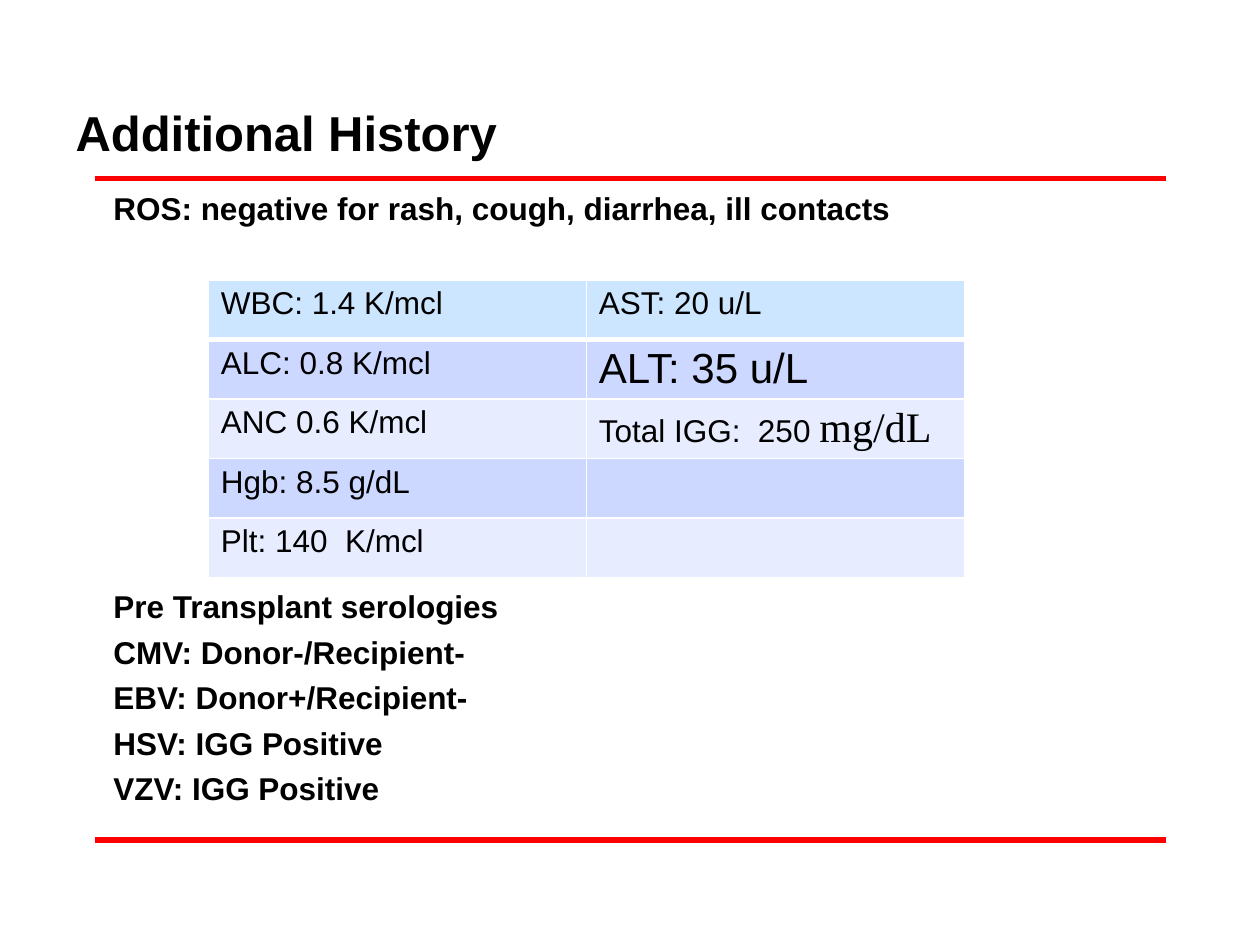
"""Build the Additional History slide with laboratory values and serologies."""
import lxml.etree
import pptx
import pptx.dml.color
import pptx.enum.shapes
import pptx.enum.text
import pptx.oxml.ns
import pptx.util

Pt = pptx.util.Pt
RGBColor = pptx.dml.color.RGBColor
qn = pptx.oxml.ns.qn

BLACK = RGBColor(0x00, 0x00, 0x00)
RED = RGBColor(0xFF, 0x00, 0x00)
WHITE = RGBColor(0xFF, 0xFF, 0xFF)
HEADER_BLUE = RGBColor(0xCC, 0xE6, 0xFF)
DARK_BAND = RGBColor(0xCC, 0xD8, 0xFF)
LIGHT_BAND = RGBColor(0xE7, 0xED, 0xFF)

SANS = "Arial"
SERIF = "Times New Roman"
ROW_HEIGHT = 34
TABLE_GAP = 206

HISTORY = [
    ("ROS: negative for rash, cough, diarrhea, ill contacts", 0),
    ("Pre Transplant serologies", TABLE_GAP),
    ("CMV: Donor-/Recipient-", 4.4),
    ("EBV: Donor+/Recipient-", 4.4),
    ("HSV: IGG Positive", 4.4),
    ("VZV: IGG Positive", 4.4),
]
LABS = [
    [[("WBC: 1.4 K/mcl", 18, SANS)], [("AST: 20 u/L", 18, SANS)]],
    [[("ALC: 0.8 K/mcl", 18, SANS)], [("ALT: 35 u/L", 24, SANS)]],
    [[("ANC 0.6 K/mcl", 18, SANS)],
     [("Total IGG:  250 ", 18, SANS), ("mg/dL", 24, SERIF)]],
    [[("Hgb: 8.5 g/dL", 18, SANS)], []],
    [[("Plt: 140  K/mcl", 18, SANS)], []],
]


def style_font(font, size, name=SANS, bold=False):
    """Apply size, typeface, weight and black colour to a font."""
    font.size = Pt(size)
    font.name = name
    font.bold = bold
    font.color.rgb = BLACK


def place(placeholder, left, top, width, height, anchor):
    """Move a placeholder and fix its text frame."""
    placeholder.left, placeholder.top = Pt(left), Pt(top)
    placeholder.width, placeholder.height = Pt(width), Pt(height)
    frame = placeholder.text_frame
    frame.word_wrap = True
    frame.auto_size = pptx.enum.text.MSO_AUTO_SIZE.NONE
    frame.vertical_anchor = anchor
    return frame


def add_rule(slide, y):
    """Draw a red horizontal rule across the slide."""
    rule = slide.shapes.add_connector(
        pptx.enum.shapes.MSO_CONNECTOR.STRAIGHT, Pt(54), Pt(y), Pt(666), Pt(y))
    rule.line.color.rgb = RED
    rule.line.width = Pt(3)
    lxml.etree.SubElement(rule._element.spPr, qn("a:effectLst"))


def fill_title(slide, text):
    """Write the title just above the upper rule."""
    frame = place(slide.shapes.title, 36, 6, 648, 90,
                  pptx.enum.text.MSO_ANCHOR.BOTTOM)
    frame.text = text
    heading = frame.paragraphs[0]
    heading.alignment = pptx.enum.text.PP_ALIGN.LEFT
    style_font(heading.font, 28, bold=True)


def fill_history(slide, entries):
    """Write the history lines without bullets around the table gap."""
    frame = place(slide.placeholders[1], 57.6, 104.4, 672, 370,
                  pptx.enum.text.MSO_ANCHOR.TOP)
    frame.text = "\n".join(text for text, _ in entries)
    for entry, (_, space) in zip(frame.paragraphs, entries):
        entry.space_before = Pt(space)
        style_font(entry.font, 18, bold=True)
        properties = entry._p.get_or_add_pPr()
        properties.set("marL", "0")
        properties.set("indent", "0")
        lxml.etree.SubElement(properties, qn("a:buNone"))


def add_border(cell, side, width):
    """Add a white border to one side of a cell."""
    border = lxml.etree.SubElement(
        cell._tc.get_or_add_tcPr(), qn(f"a:ln{side}"), w=str(Pt(width)))
    solid = lxml.etree.SubElement(border, qn("a:solidFill"))
    lxml.etree.SubElement(solid, qn("a:srgbClr"), val=str(WHITE))


def fill_cell(cell, pieces, row):
    """Write a cell's runs and give it its row's borders and fill."""
    for side in "LRTB":
        below_header = (row, side) in ((0, "B"), (1, "T"))
        add_border(cell, side, 3 if below_header else 1)
    cell.fill.solid()
    band = DARK_BAND if row % 2 else LIGHT_BAND
    cell.fill.fore_color.rgb = band if row else HEADER_BLUE
    value = cell.text_frame.paragraphs[0]
    style_font(value.font, 18)
    for text, size, name in pieces:
        run = value.add_run()
        run.text = text
        style_font(run.font, size, name)


def add_labs(slide, labs):
    """Add the table of laboratory values."""
    table = slide.shapes.add_table(
        len(labs), len(labs[0]), Pt(119), Pt(160), Pt(432),
        Pt(ROW_HEIGHT * len(labs))).table
    table.first_row = False
    table.horz_banding = False
    for row, values in enumerate(labs):
        for column, pieces in enumerate(values):
            fill_cell(table.cell(row, column), pieces, row)


def main():
    """Build and save the slide."""
    deck = pptx.Presentation()
    deck.slide_width, deck.slide_height = Pt(720), Pt(540)
    slide = deck.slides.add_slide(deck.slide_layouts[1])
    for y in (102, 480):
        add_rule(slide, y)
    fill_title(slide, "Additional History")
    fill_history(slide, HISTORY)
    add_labs(slide, LABS)
    deck.save("out.pptx")


if __name__ == "__main__":
    main()
